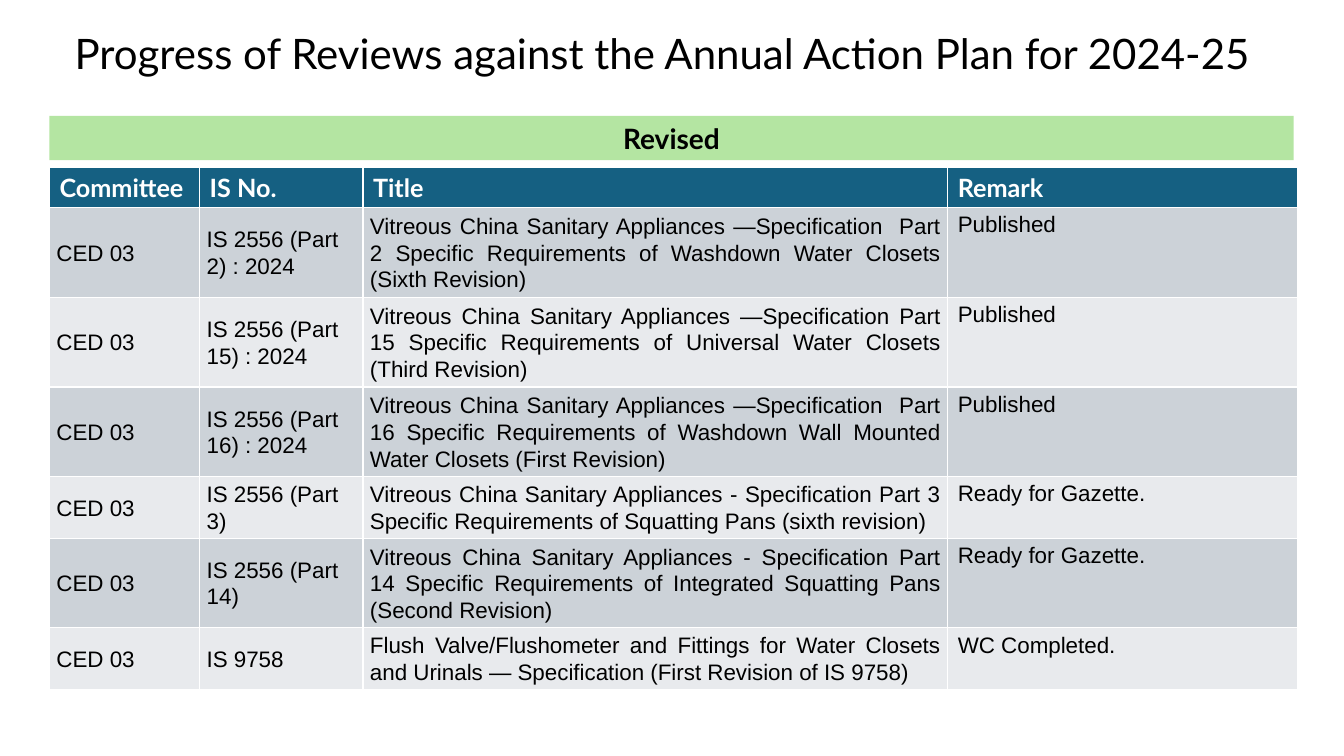
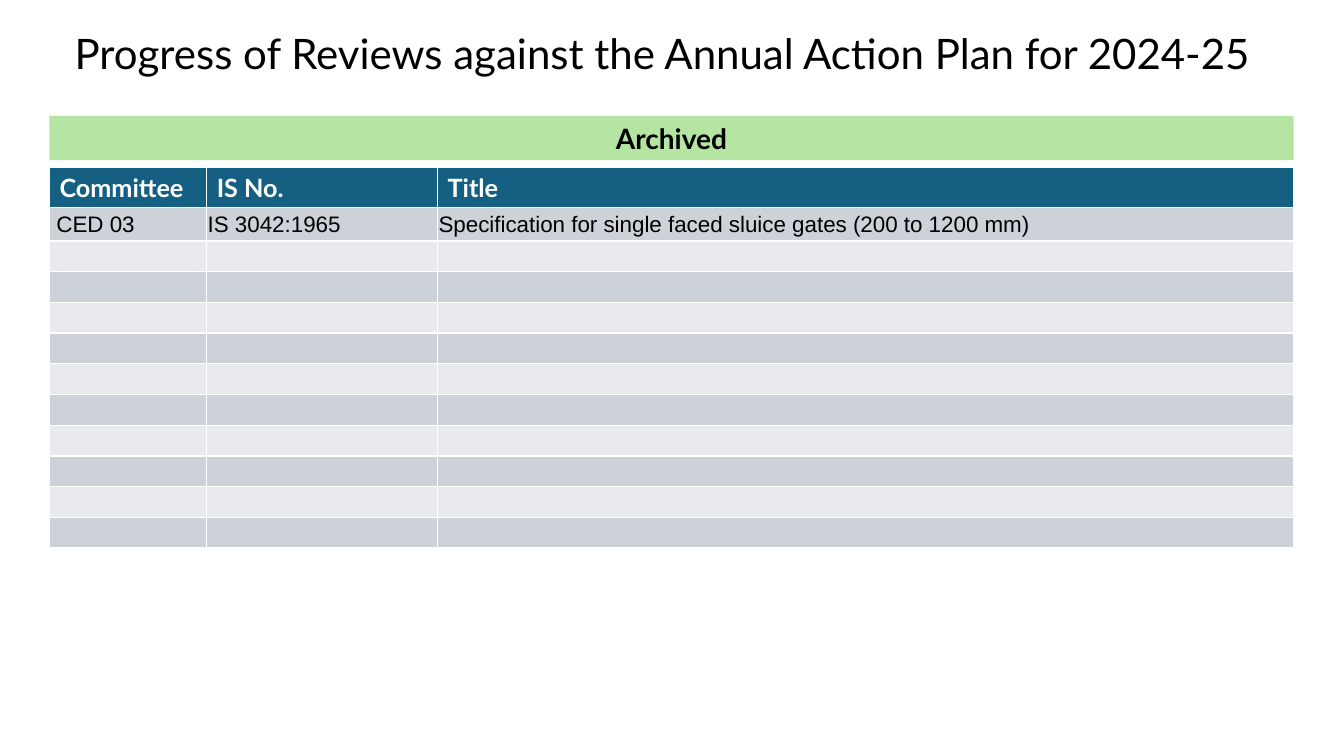
import pptx
import pptx.dml.color
import pptx.enum.shapes
import pptx.enum.text
import pptx.oxml.ns
import pptx.util
import lxml.etree

Inches = pptx.util.Inches
ALIGN = pptx.enum.text.PP_ALIGN
ANCHOR = pptx.enum.text.MSO_ANCHOR

TITLE = "Progress of Reviews against the Annual Action Plan for 2024-25"
HEADING_FONT, BODY_FONT = "Lato", "Arial"
BLACK, WHITE = "000000", "FFFFFF"
GREEN, BLUE = "B4E5A2", "156082"
BANDS = ["CCD2D8", "E8EAED"]

LEFT, TABLE_TOP = 0.49, 1.66
HEADER_HEIGHT = 0.4

DEFAULT_INSETS = (0.1, 0.05, 0.1, 0.05)
PADDED = {"insets": (0.07, 0.02, 0.07, 0.02), "anchor": ANCHOR.MIDDLE, "spacing": 1.07}
JUSTIFIED = {**PADDED, "align": ALIGN.JUSTIFY}
TIGHT = {"insets": (0.01, 0.01, 0.01, 0), "anchor": ANCHOR.MIDDLE}
PLAIN = {}

SLIDES = [
    {
        "banner": "Revised",
        "header": ["Committee", "IS No.", "Title", "Remark"],
        "widths": [1.49, 1.62, 5.8, 3.47],
        "heights": [0.89, 0.89, 0.89, 0.61, 0.89, 0.61],
        "styles": [PADDED, PADDED, JUSTIFIED, PLAIN],
        "rows": [
            ("CED 03", "IS 2556 (Part 2) : 2024",
             "Vitreous China Sanitary Appliances —Specification  Part 2 Specific Requirements "
             "of Washdown Water Closets (Sixth Revision)", "Published"),
            ("CED 03", "IS 2556 (Part 15) : 2024",
             "Vitreous China Sanitary Appliances —Specification Part 15 Specific Requirements "
             "of Universal Water Closets (Third Revision)", "Published"),
            ("CED 03", "IS 2556 (Part 16) : 2024",
             "Vitreous China Sanitary Appliances —Specification  Part 16 Specific Requirements "
             "of Washdown Wall Mounted Water Closets (First Revision)", "Published"),
            ("CED 03", "IS 2556 (Part 3)",
             "Vitreous China Sanitary Appliances - Specification Part 3 Specific Requirements "
             "of Squatting Pans (sixth revision)", "Ready for Gazette."),
            ("CED 03", "IS 2556 (Part 14)",
             "Vitreous China Sanitary Appliances - Specification Part 14 Specific Requirements "
             "of Integrated Squatting Pans (Second Revision)", "Ready for Gazette."),
            ("CED 03", "IS 9758",
             "Flush Valve/Flushometer and Fittings for Water Closets and Urinals — "
             "Specification (First Revision of IS 9758)", "WC Completed."),
        ],
    },
    {
        "banner": "Archived",
        "header": ["Committee", "IS No.", "Title"],
        "widths": [1.56, 2.29, 8.49],
        "heights": [0.33] + [0.305] * 10,
        "styles": [PADDED, TIGHT, TIGHT],
        "rows": [
            ("CED 03", "IS 3042:1965",
             "Specification for single faced sluice gates (200 to 1200 mm)"),
        ] + [("", "", "")] * 10,
    },
]


def color(value):
    return pptx.dml.color.RGBColor.from_string(value)


def paint(target, value):
    target.fill.solid()
    target.fill.fore_color.rgb = color(value)


def write(para, text, size, font, ink=BLACK, bold=False, align=ALIGN.LEFT, spacing=None):
    para.alignment = align
    if spacing:
        para.line_spacing = spacing
    span = para.add_run()
    span.text = text
    span.font.size = pptx.util.Pt(size)
    span.font.name = font
    span.font.bold = bold
    span.font.color.rgb = color(ink)


def place(shape, left, top, width, height):
    shape.left, shape.top = Inches(left), Inches(top)
    shape.width, shape.height = Inches(width), Inches(height)


def add_title(page):
    title = page.shapes.title
    place(title, 0.17, 0.19, 12.8, 0.64)
    frame = title.text_frame
    frame.auto_size = pptx.enum.text.MSO_AUTO_SIZE.NONE
    frame.vertical_anchor = ANCHOR.BOTTOM
    write(frame.paragraphs[0], TITLE, 30, HEADING_FONT, align=ALIGN.CENTER, spacing=0.9)


def add_banner(page, text):
    banner = page.shapes.add_shape(
        pptx.enum.shapes.MSO_SHAPE.RECTANGLE,
        Inches(LEFT), Inches(1.15), Inches(12.34), Inches(0.44))
    banner.shadow.inherit = False
    paint(banner, GREEN)
    banner.line.fill.background()
    write(banner.text_frame.paragraphs[0], text, 20, HEADING_FONT, bold=True, align=ALIGN.CENTER)


def fill_cell(cell, text, style):
    insets = style.get("insets", DEFAULT_INSETS)
    cell.margin_left, cell.margin_top, cell.margin_right, cell.margin_bottom = map(Inches, insets)
    cell.vertical_anchor = style.get("anchor", ANCHOR.TOP)
    para = cell.text_frame.paragraphs[0]
    if text:
        write(para, text, 16, BODY_FONT,
              align=style.get("align", ALIGN.LEFT), spacing=style.get("spacing"))
    else:
        tag = pptx.oxml.ns.qn("a:endParaRPr")
        lxml.etree.SubElement(para._p, tag).set("sz", "1100")


def add_review_table(page, content):
    widths = content["widths"]
    heights = [HEADER_HEIGHT] + content["heights"]
    table = page.shapes.add_table(
        len(heights), len(widths), Inches(LEFT), Inches(TABLE_TOP),
        Inches(sum(widths)), Inches(sum(heights))).table
    for column, width in zip(table.columns, widths):
        column.width = Inches(width)
    for row, height in zip(table.rows, heights):
        row.height = Inches(height)
    for index, text in enumerate(content["header"]):
        cell = table.cell(0, index)
        paint(cell, BLUE)
        write(cell.text_frame.paragraphs[0], text, 18, HEADING_FONT, WHITE, bold=True)
    for row_index, texts in enumerate(content["rows"]):
        for index, (text, style) in enumerate(zip(texts, content["styles"])):
            cell = table.cell(row_index + 1, index)
            paint(cell, BANDS[row_index % 2])
            fill_cell(cell, text, style)


def main():
    deck = pptx.Presentation()
    deck.slide_width, deck.slide_height = Inches(13.33), Inches(7.5)
    for content in SLIDES:
        page = deck.slides.add_slide(deck.slide_layouts[5])
        add_title(page)
        add_banner(page, content["banner"])
        add_review_table(page, content)
    deck.save("out.pptx")


if __name__ == "__main__":
    main()
